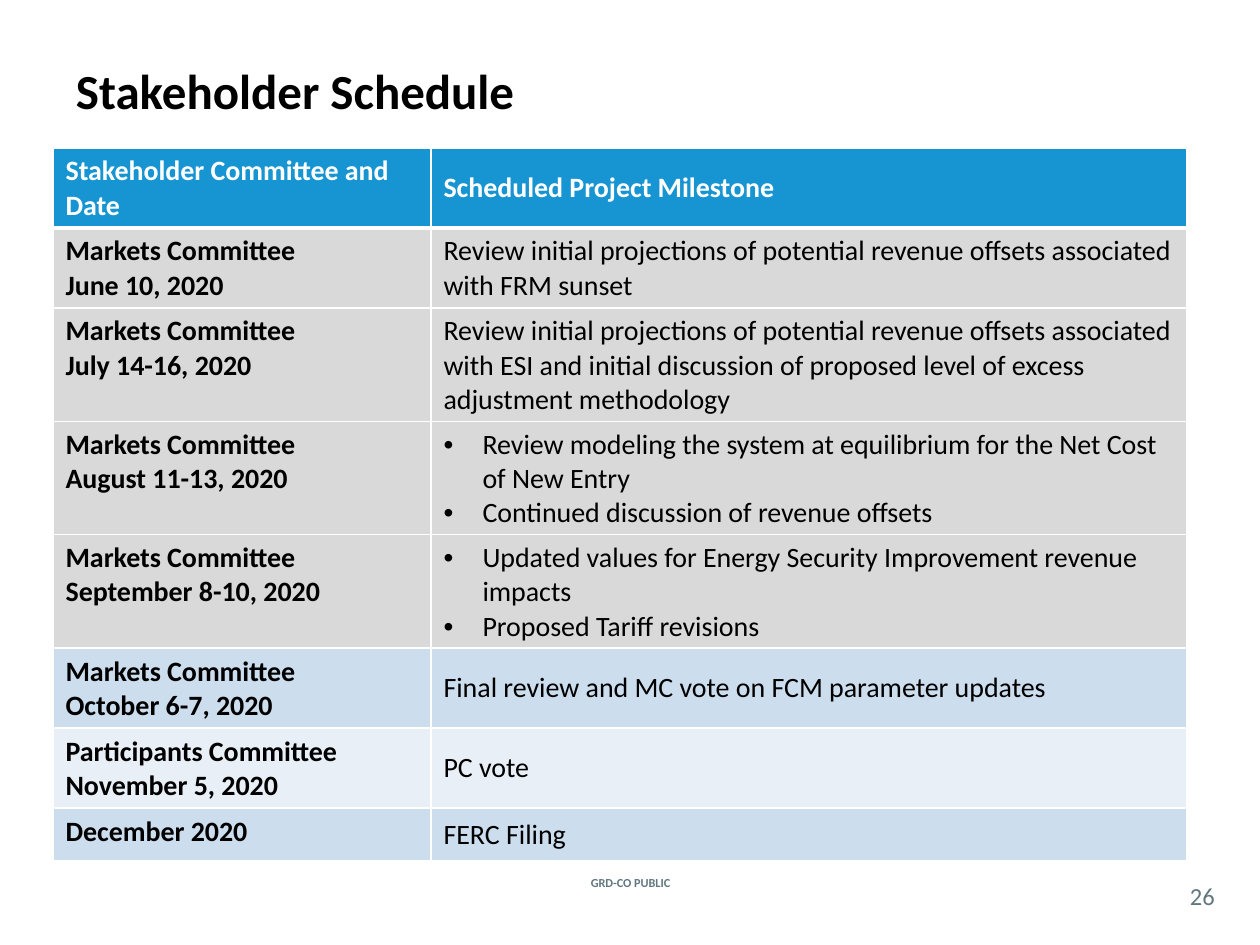
import dataclasses

import lxml.etree
import pptx
import pptx.dml.color
import pptx.enum.text
import pptx.oxml.ns
import pptx.util

EMU_PER_PX = 914400 // 126
ANCHOR = pptx.enum.text.MSO_ANCHOR
ALIGN = pptx.enum.text.PP_ALIGN


@dataclasses.dataclass(frozen=True)
class Theme:
    font: str = "Calibri"
    black: str = "000000"
    white: str = "FFFFFF"
    slate: str = "62777F"
    header: str = "1795D2"
    past: str = "D9D9D9"
    band_dark: str = "CCDDEE"
    band_light: str = "E8EFF7"
    title_size: int = 28
    table_size: int = 16
    number_size: int = 14
    footer_size: int = 7


THEME = Theme()

# Row heights in px, by the number of text lines
ROW_HEIGHT = {1: 53, 2: 80, 3: 112}

# Fill, text lines, committee and date, milestones (several become bullets)
SCHEDULE = [
    (THEME.past, 2, ["Markets Committee", "June 10, 2020"],
     ["Review initial projections of potential revenue offsets associated "
      "with FRM sunset"]),
    (THEME.past, 3, ["Markets Committee", "July 14-16, 2020"],
     ["Review initial projections of potential revenue offsets associated "
      "with ESI and initial discussion of proposed level of excess "
      "adjustment methodology"]),
    (THEME.past, 3, ["Markets Committee", "August 11-13, 2020"],
     ["Review modeling the system at equilibrium for the Net Cost of New Entry",
      "Continued discussion of revenue offsets"]),
    (THEME.past, 3, ["Markets Committee", "September 8-10, 2020"],
     ["Updated values for Energy Security Improvement revenue impacts",
      "Proposed Tariff revisions"]),
    (THEME.band_dark, 2, ["Markets Committee", "October 6-7, 2020"],
     ["Final review and MC vote on FCM parameter updates"]),
    (THEME.band_light, 2, ["Participants Committee", "November 5, 2020"],
     ["PC vote"]),
    (THEME.band_dark, 1, ["December 2020"], ["FERC Filing"]),
]


def px(length):
    return pptx.util.Emu(length * EMU_PER_PX)


def add_element(parent, tag, **attributes):
    return lxml.etree.SubElement(parent, pptx.oxml.ns.qn(tag), attributes)


def write_text(frame, lines, *, size, color=THEME.black, bold=False,
               align=ALIGN.LEFT, bullets=False):
    for index, line in enumerate(lines):
        paragraph = frame.paragraphs[0] if index == 0 else frame.add_paragraph()
        if bullets:
            properties = paragraph._p.get_or_add_pPr()
            properties.set("marL", str(px(39)))
            properties.set("indent", str(px(-39)))
            add_element(properties, "a:buFont", typeface="Arial")
            add_element(properties, "a:buChar", char="•")
        paragraph.alignment = align
        run = paragraph.add_run()
        run.text = line
        run.font.name = THEME.font
        run.font.size = pptx.util.Pt(size)
        run.font.bold = bold
        run.font.color.rgb = pptx.dml.color.RGBColor.from_string(color)


class SlideBuilder:
    def __init__(self, slide, theme):
        self.slide = slide
        self.theme = theme

    def text(self, content, left, top, width, height, inset=0, **style):
        box = self.slide.shapes.add_textbox(px(left), px(top), px(width), px(height))
        frame = box.text_frame
        frame.word_wrap = True
        frame.vertical_anchor = ANCHOR.MIDDLE
        frame.margin_left = frame.margin_right = px(inset)
        frame.margin_top = frame.margin_bottom = 0
        write_text(frame, [content], **style)

    def table(self, left, top, column_widths, row_heights):
        shape = self.slide.shapes.add_table(
            len(row_heights), len(column_widths), px(left), px(top),
            px(sum(column_widths)), px(sum(row_heights)))
        table = shape.table
        for column, width in zip(table.columns, column_widths):
            column.width = px(width)
        for row, height in zip(table.rows, row_heights):
            row.height = px(height)
        return table

    def cell(self, cell, lines, fill, anchor=ANCHOR.MIDDLE, top_line=1,
             bottom_line=1, **style):
        properties = cell._tc.get_or_add_tcPr()
        borders = {"L": 1, "R": 1, "T": top_line, "B": bottom_line}
        for side, width in borders.items():
            line = add_element(properties, f"a:ln{side}",
                               w=str(pptx.util.Pt(width)))
            solid = add_element(line, "a:solidFill")
            add_element(solid, "a:srgbClr", val=self.theme.white)
        cell.fill.solid()
        cell.fill.fore_color.rgb = pptx.dml.color.RGBColor.from_string(fill)
        cell.vertical_anchor = anchor
        write_text(cell.text_frame, lines, size=self.theme.table_size, **style)


def main():
    presentation = pptx.Presentation()
    presentation.slide_width = px(1260)
    presentation.slide_height = px(945)
    slide = presentation.slides.add_slide(presentation.slide_layouts[6])
    builder = SlideBuilder(slide, THEME)

    # Footer, title and page number
    builder.text("GRD-CO PUBLIC", 538, 872, 185, 21, size=THEME.footer_size,
                 color=THEME.slate, bold=True, align=ALIGN.CENTER)
    builder.text("Stakeholder Schedule", 63, 53, 1134, 73, inset=13,
                 size=THEME.title_size, bold=True)
    builder.text("26", 1176, 877, 53, 37, size=THEME.number_size,
                 color=THEME.slate, align=ALIGN.CENTER)

    # Schedule table
    heights = [ROW_HEIGHT[2]] + [ROW_HEIGHT[row[1]] for row in SCHEDULE]
    table = builder.table(53, 148, [378, 756], heights)
    headings = ["Stakeholder Committee and Date", "Scheduled Project Milestone"]
    for column, heading in enumerate(headings):
        builder.cell(table.cell(0, column), [heading], THEME.header,
                     bottom_line=3, color=THEME.white, bold=True)
    for index, (fill, _, meeting, milestones) in enumerate(SCHEDULE, start=1):
        top_line = 3 if index == 1 else 1
        builder.cell(table.cell(index, 0), meeting, fill, anchor=ANCHOR.TOP,
                     top_line=top_line, bold=True)
        builder.cell(table.cell(index, 1), milestones, fill, top_line=top_line,
                     bullets=len(milestones) > 1)

    presentation.save("out.pptx")


if __name__ == "__main__":
    main()
